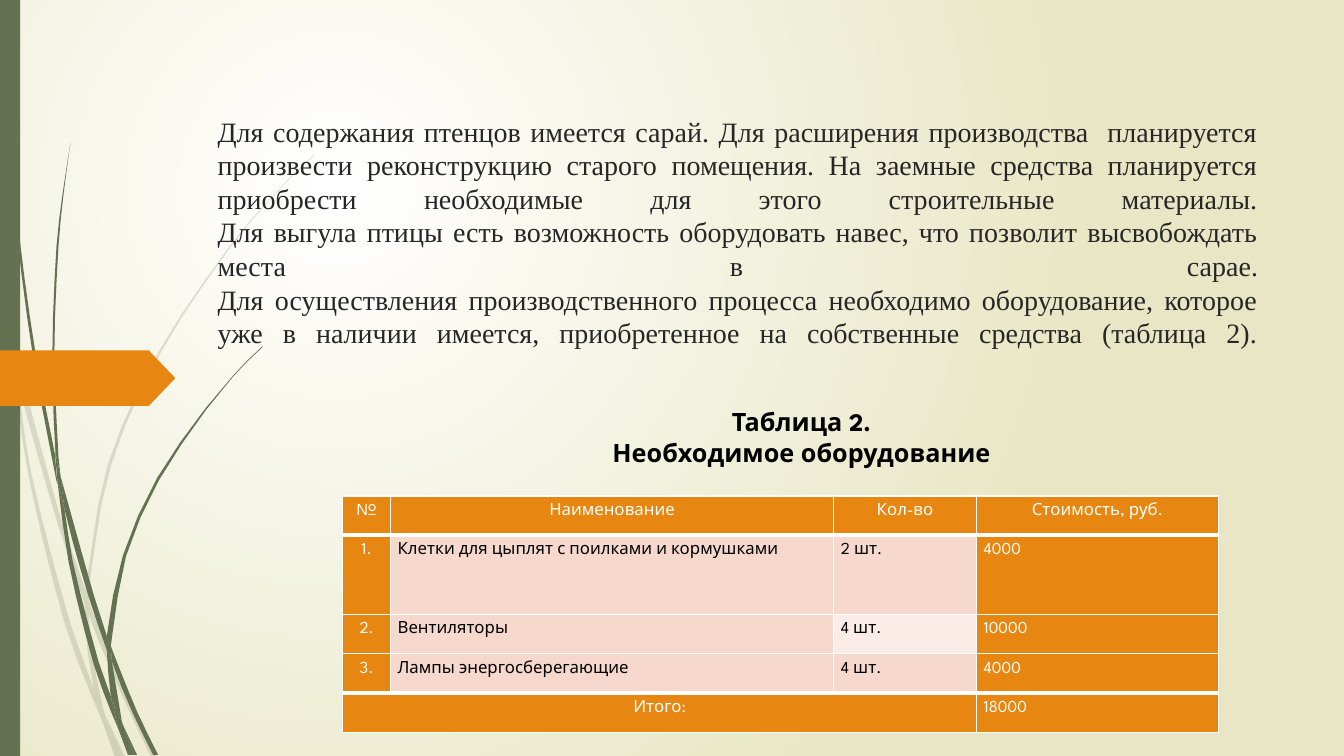
from dataclasses import dataclass
from math import dist

from lxml import etree
from pptx import Presentation
from pptx.dml.color import RGBColor
from pptx.enum.shapes import MSO_SHAPE
from pptx.enum.text import MSO_ANCHOR, MSO_AUTO_SIZE, PP_ALIGN
from pptx.oxml.ns import qn
from pptx.util import Cm, Pt

RECTANGLE, PENTAGON = MSO_SHAPE.RECTANGLE, MSO_SHAPE.PENTAGON
BOTTOM, MIDDLE = MSO_ANCHOR.BOTTOM, MSO_ANCHOR.MIDDLE
NO_FIT, GROW = MSO_AUTO_SIZE.NONE, MSO_AUTO_SIZE.SHAPE_TO_FIT_TEXT
LEFT, CENTER, JUSTIFY = PP_ALIGN.LEFT, PP_ALIGN.CENTER, PP_ALIGN.JUSTIFY


@dataclass(frozen=True)
class Theme:
    """Colours, fonts and type sizes of the slide."""
    paper: str = "FFFFFF"
    sand: str = "E8E6C4"
    moss: str = "647252"
    orange: str = "E78712"
    blush: str = "F6D9CC"
    pale: str = "FAEDE7"
    ink: str = "262626"
    black: str = "000000"
    serif: str = "Times New Roman"
    sans: str = "League Spartan"
    title_size: int = 20
    caption_size: int = 18
    table_size: int = 12


THEME = Theme()
GRASS_UNIT = 0.0254
STEP_LENGTH = 45
CORNER_COSINE = 0.8

PALE_GRASS = [
    [(11, 350), (9, 322), (0, 282), (0, 299), (10, 344)],
    [(58, 522), (84, 599), (85, 586), (62, 520), (14, 345), (17, 376)],
    [(92, 607), (88, 596), (88, 610), (123, 694), (150, 751), (155, 751), (127, 692)],
    [(119, 751), (124, 751), (105, 711)],
    [(93, 683), (70, 619), (31, 469), (17, 376), (11, 350), (28, 470), (65, 621), (92, 693),
     (101, 714), (99, 707)],
    [(84, 599), (87, 646), (93, 683), (96, 692), (105, 711), (103, 706), (91, 646), (88, 610),
     (88, 608)],
    [(88, 584), (110, 462), (160, 349), (229, 245), (268, 198), (290, 175), (312, 154), (312, 153),
     (289, 175), (268, 197), (228, 244), (158, 348), (107, 461), (85, 584), (85, 586), (88, 596)],
    [(101, 714), (114, 751), (119, 751)],
    [(88, 608), (88, 610), (88, 596), (85, 586), (84, 599)],
    [(96, 692), (93, 683), (99, 707), (101, 714), (119, 751), (105, 711)],
]
DARK_GRASS = [
    [(7, 110), (17, 233), (33, 355), (56, 477), (57, 481), (55, 457), (55, 453), (36, 355),
     (19, 232), (8, 109), (5, 48), (4, 0), (3, 0), (4, 48)],
    [(88, 592), (106, 645), (106, 633), (106, 631), (93, 590), (60, 472), (64, 505)],
    [(113, 649), (110, 641), (111, 656), (132, 708), (152, 749), (157, 749), (136, 706)],
    [(110, 691), (98, 657), (72, 556), (64, 505), (57, 477), (68, 557), (93, 659), (111, 708),
     (117, 722), (116, 717)],
    [(60, 472), (58, 453), (54, 349), (58, 245), (63, 193), (70, 141), (62, 193), (56, 245),
     (52, 349), (55, 449)],
    [(133, 749), (136, 749), (122, 719)],
    [(57, 477), (64, 505), (60, 472), (55, 449), (55, 453)],
    [(111, 633), (125, 552), (158, 476), (205, 406), (231, 374), (245, 359), (261, 344), (260, 344),
     (245, 358), (231, 373), (204, 405), (156, 474), (122, 551), (106, 631), (110, 641)],
    [(117, 722), (127, 749), (131, 749)],
    [(106, 645), (110, 691), (116, 706), (122, 719), (121, 716), (111, 656), (109, 651)],
    [(106, 645), (109, 651), (111, 656), (110, 641), (106, 631), (106, 633)],
    [(116, 706), (110, 691), (116, 717), (117, 722), (130, 749), (133, 749), (122, 719)],
]

TITLE = (
    "Для содержания птенцов имеется сарай. Для расширения производства  планируется произвести "
    "реконструкцию старого помещения. На заемные средства планируется приобрести необходимые для "
    "этого строительные материалы.\v"
    "Для выгула птицы есть возможность оборудовать навес, что позволит высвобождать места в сарае.\v"
    "Для осуществления производственного процесса необходимо оборудование, которое уже в наличии "
    "имеется, приобретенное на собственные средства (таблица 2).\v"
)
CAPTION = "Таблица 2.\nНеобходимое оборудование"
EQUIPMENT = [
    ["№", "Наименование", "Кол-во", "Стоимость, руб."],
    ["1.", "Клетки для цыплят с поилками и кормушками", "2 шт.", "4000"],
    ["2.", "Вентиляторы", "4 шт.", "10000"],
    ["3.", "Лампы энергосберегающие", "4 шт.", "4000"],
    ["Итого:", "", "", "18000"],
]
COLUMN_WIDTHS = [1.2, 11.17, 3.6, 6.1]
ROW_HEIGHTS = [0.99, 1.99, 0.99, 0.99, 0.99]


def set_all(target, values):
    """Set every attribute named in a dict of format values."""
    for name, value in values.items():
        setattr(target, name, value)


def set_font(font, name, size, colour, bold=False):
    """Give a font its face, size, colour and weight."""
    set_all(font, {"name": name, "size": Pt(size), "bold": bold})
    font.color.rgb = RGBColor.from_string(colour)


def paint(shape, colour, alpha=100):
    """Fill a shape without line or shadow, at an opacity in percent."""
    shape.shadow.inherit = False
    shape.fill.solid()
    shape.fill.fore_color.rgb = RGBColor.from_string(colour)
    shape.line.fill.background()
    if alpha < 100:
        tint = shape.element.spPr.find(qn("a:solidFill"))[0]
        etree.SubElement(tint, qn("a:alpha"), val=str(alpha * 1000))


def direction(start, end):
    """Return the unit vector from one point to another."""
    length = dist(start, end)
    return tuple((b - a) / length for a, b in zip(start, end))


def smooth(points):
    """Return a closed outline curved through its points, keeping sharp corners."""
    outline = []
    for index, here in enumerate(points):
        before, after = points[index - 1], points[(index + 1) % len(points)]
        beyond = points[(index + 2) % len(points)]
        chord, length = direction(here, after), dist(here, after)
        tangents = []
        for first, middle, last in ((before, here, after), (here, after, beyond)):
            into, out = direction(first, middle), direction(middle, last)
            bend = sum(a * b for a, b in zip(into, out))
            tangents.append(direction(first, last) if bend > CORNER_COSINE else chord)
        steps = 1 + int(length / STEP_LENGTH)
        for step in range(steps):
            t = step / steps
            outline.append(tuple(
                a * (2 * t**3 - 3 * t**2 + 1) + b * (3 * t**2 - 2 * t**3)
                + length * (u * (t**3 - 2 * t**2 + t) + v * (t**3 - t**2))
                for a, b, u, v in zip(here, after, *tangents)))
    return outline


def add_background(page):
    """Fill the page with a round gradient."""
    fill = page.background.fill
    fill.gradient()
    for stop, colour in zip(fill.gradient_stops, (THEME.paper, THEME.sand)):
        stop.color.rgb = RGBColor.from_string(colour)
    gradient = page.element.find(".//" + qn("a:gradFill"))
    gradient.remove(gradient.find(qn("a:lin")))
    circle = etree.SubElement(gradient, qn("a:path"), path="circle")
    etree.SubElement(circle, qn("a:fillToRect"), l="50000", t="50000", r="100000", b="100000")


def add_grass(page, blades, alpha, left, top):
    """Draw a group of grass blades from the given corner."""
    shapes = []
    for blade in blades:
        points = [tuple(Cm(GRASS_UNIT * value) for value in point) for point in smooth(blade)]
        builder = page.shapes.build_freeform(*points[0])
        builder.add_line_segments(points[1:], close=True)
        shapes.append(builder.convert_to_shape(Cm(left), Cm(top)))
        paint(shapes[-1], THEME.moss, alpha)
    page.shapes.add_group_shape(shapes)


def add_side(page, left, top, width, height):
    """Draw the grass, the edge strip and the arrow tab down one side."""
    add_grass(page, PALE_GRASS, 20, left, top)
    add_grass(page, DARK_GRASS, 100, left, top)
    strip = page.shapes.add_shape(RECTANGLE, Cm(left), Cm(top), Cm(0.51), Cm(height))
    paint(strip, THEME.moss)
    tab = page.shapes.add_shape(PENTAGON, Cm(left), Cm(top + 8.83), Cm(width), Cm(1.4))
    tab.adjustments[0] = 0.48
    paint(tab, THEME.orange)


def fill_placeholder(holder, box, text, frame_format, para_format, font, indent=0):
    """Place a placeholder on top of the page and set its formatted text."""
    set_all(holder, dict(zip(("left", "top", "width", "height"), map(Cm, box))))
    holder.element.getparent().append(holder.element)
    frame = holder.text_frame
    frame.text = text
    set_all(frame, frame_format)
    level = etree.SubElement(holder.element.txBody.find(qn("a:lstStyle")), qn("a:lvl1pPr"),
                             marL="0", indent=str(Cm(indent)))
    etree.SubElement(level, qn("a:buNone"))
    etree.SubElement(level, qn("a:defRPr"), sz=str(font["size"] * 100))
    for para in frame.paragraphs:
        set_all(para, para_format)
        for span in para.runs:
            set_font(span.font, **font)


def format_cell(cell, text, fill, colour, align, thick_side):
    """Write one table cell with its fill and white borders."""
    set_all(cell, {"text": text, "margin_left": Cm(0.18), "margin_right": Cm(0.18),
                   "margin_top": 0, "margin_bottom": 0})
    para = cell.text_frame.paragraphs[0]
    set_all(para, {"alignment": align, "line_spacing": 1.5})
    for span in para.runs:
        set_font(span.font, THEME.sans, THEME.table_size, colour)
    properties = cell._tc.get_or_add_tcPr()
    for side in ("lnL", "lnR", "lnT", "lnB"):
        width = Pt(3 if side == thick_side else 1)
        line = etree.SubElement(properties, qn("a:" + side), w=str(width))
        solid = etree.SubElement(line, qn("a:solidFill"))
        etree.SubElement(solid, qn("a:srgbClr"), val=THEME.paper)
    cell.fill.solid()
    cell.fill.fore_color.rgb = RGBColor.from_string(fill)


def add_equipment(page, left, top):
    """Add the equipment table from its top left corner."""
    last = len(EQUIPMENT) - 1
    size = Cm(sum(COLUMN_WIDTHS)), Cm(sum(ROW_HEIGHTS))
    table = page.shapes.add_table(last + 1, len(COLUMN_WIDTHS), Cm(left), Cm(top), *size).table
    for column, width in zip(table.columns, COLUMN_WIDTHS):
        column.width = Cm(width)
    for row, height in zip(table.rows, ROW_HEIGHTS):
        row.height = Cm(height)
    table.cell(last, 0).merge(table.cell(last, 2))
    for i, texts in enumerate(EQUIPMENT):
        for j, text in enumerate(texts):
            plain = 0 < i < last and j in (1, 2)
            light = THEME.pale if (i, j) == (2, 2) else THEME.blush
            format_cell(table.cell(i, j), text, light if plain else THEME.orange,
                        THEME.black if plain else THEME.paper,
                        CENTER if i == 0 or j == 0 else LEFT, {0: "lnB", last: "lnT"}.get(i))


def main():
    """Build the slide and save the deck."""
    deck = Presentation()
    set_all(deck, {"slide_width": Cm(33.87), "slide_height": Cm(19.05)})
    page = deck.slides.add_slide(deck.slide_layouts[1])
    title, caption = page.placeholders
    add_background(page)
    add_side(page, 0, 0, 4.42, 19.05)
    fill_placeholder(title, (5.23, 1.83, 26.72, 7.95), TITLE,
                     {"vertical_anchor": BOTTOM, "auto_size": NO_FIT, "word_wrap": True},
                     {"alignment": JUSTIFY},
                     {"name": THEME.serif, "size": THEME.title_size, "colour": THEME.ink})
    fill_placeholder(caption, (13.89, 10.11, 11.35, 1.8), CAPTION,
                     {"vertical_anchor": MIDDLE, "auto_size": GROW, "word_wrap": False},
                     {"alignment": CENTER, "space_before": Pt(0)},
                     {"name": THEME.sans, "size": THEME.caption_size, "colour": THEME.black,
                      "bold": True}, indent=1.27)
    add_equipment(page, 8.64, 12.5)
    deck.save("out.pptx")


if __name__ == "__main__":
    main()
